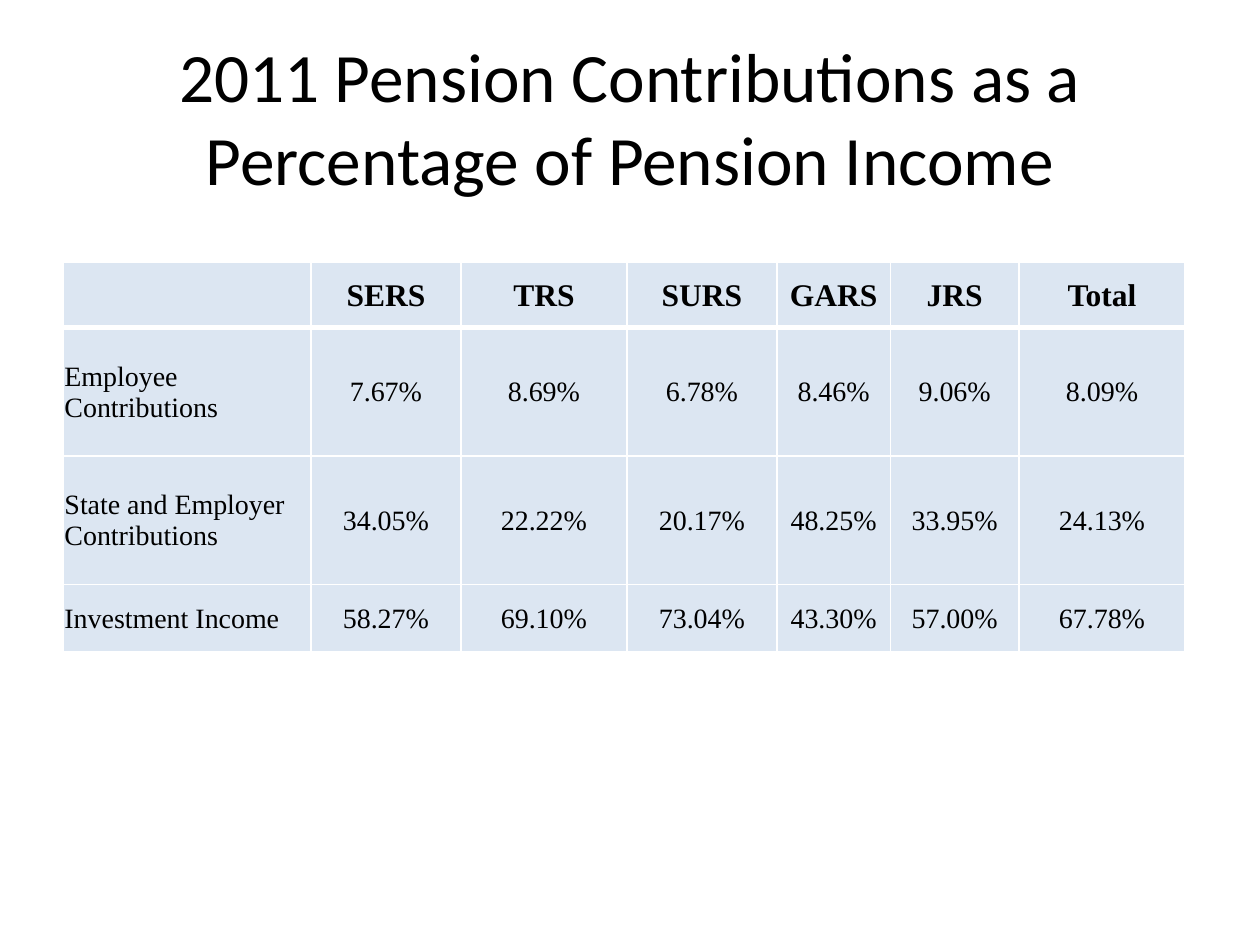
from typing import NamedTuple

from lxml import etree
from pptx import Presentation
from pptx.dml.color import RGBColor
from pptx.enum.text import MSO_ANCHOR, MSO_AUTO_SIZE, PP_ALIGN
from pptx.oxml.ns import qn
from pptx.util import Cm, Pt

BLACK = RGBColor(0x00, 0x00, 0x00)
WHITE = RGBColor(0xFF, 0xFF, 0xFF)
PALE_BLUE = RGBColor(0xDC, 0xE6, 0xF2)
LEFT, CENTER = PP_ALIGN.LEFT, PP_ALIGN.CENTER
MIDDLE = MSO_ANCHOR.MIDDLE
NO_AUTOFIT = MSO_AUTO_SIZE.NONE
TITLE_ONLY_LAYOUT = 5
THIN, THICK = 1, 3  # border widths in points


class TableRow(NamedTuple):
    height: float
    texts: tuple[str, ...]


COLUMN_WIDTHS = (5.0, 3.02, 3.35, 3.02, 2.29, 2.59, 3.35)
ROWS = (
    TableRow(1.32, ("", "SERS", "TRS", "SURS", "GARS", "JRS", "Total")),
    TableRow(2.59, ("Employee Contributions",
                    "7.67%", "8.69%", "6.78%", "8.46%", "9.06%", "8.09%")),
    TableRow(2.59, ("State and Employer Contributions",
                    "34.05%", "22.22%", "20.17%", "48.25%", "33.95%", "24.13%")),
    TableRow(1.35, ("Investment Income",
                    "58.27%", "69.10%", "73.04%", "43.30%", "57.00%", "67.78%")),
)


def add_text(paragraph, text: str, font_name: str, size: float,
             bold: bool = False) -> None:
    run = paragraph.add_run()
    run.text = text
    run.font.name = font_name
    run.font.size = Pt(size)
    run.font.bold = bold
    run.font.color.rgb = BLACK


def set_borders(cell, top: float, bottom: float) -> None:
    """Draw white borders; call before filling, as the schema puts lines first."""
    properties = cell._tc.get_or_add_tcPr()
    widths = {"a:lnL": THIN, "a:lnR": THIN, "a:lnT": top, "a:lnB": bottom}
    for tag, width in widths.items():
        line = etree.SubElement(properties, qn(tag), w=str(Pt(width)))
        fill = etree.SubElement(line, qn("a:solidFill"))
        etree.SubElement(fill, qn("a:srgbClr"), val=str(WHITE))


def fill_cell(cell, text: str, row: int, column: int) -> None:
    is_header = row == 0
    set_borders(cell, top=THICK if row == 1 else THIN,
                bottom=THICK if is_header else THIN)
    cell.fill.solid()
    cell.fill.fore_color.rgb = PALE_BLUE
    if not text:
        return
    cell.vertical_anchor = MIDDLE
    cell.margin_left = cell.margin_right = cell.margin_top = Cm(0.03)
    cell.margin_bottom = 0
    paragraph = cell.text_frame.paragraphs[0]
    paragraph.alignment = LEFT if column == 0 else CENTER
    add_text(paragraph, text, "Times New Roman", 18 if is_header else 16, is_header)


def add_title(slide, text: str) -> None:
    title = slide.shapes.title
    title.left, title.top = Cm(1.27), Cm(0.76)
    title.width, title.height = Cm(22.86), Cm(3.18)
    frame = title.text_frame
    frame.word_wrap = True
    frame.auto_size = NO_AUTOFIT
    frame.vertical_anchor = MIDDLE
    paragraph = frame.paragraphs[0]
    paragraph.alignment = CENTER
    add_text(paragraph, text, "Calibri", 39.6)


def add_contribution_table(slide) -> None:
    table = slide.shapes.add_table(
        len(ROWS), len(COLUMN_WIDTHS), Cm(1.27), Cm(5.28),
        Cm(sum(COLUMN_WIDTHS)), Cm(sum(row.height for row in ROWS))).table
    table.horz_banding = False
    for column, width in zip(table.columns, COLUMN_WIDTHS):
        column.width = Cm(width)
    for row_index, row in enumerate(ROWS):
        table.rows[row_index].height = Cm(row.height)
        for column_index, text in enumerate(row.texts):
            fill_cell(table.cell(row_index, column_index), text,
                      row_index, column_index)


def main() -> None:
    presentation = Presentation()
    presentation.slide_width, presentation.slide_height = Cm(25.4), Cm(19.05)
    slide = presentation.slides.add_slide(
        presentation.slide_layouts[TITLE_ONLY_LAYOUT])
    add_title(slide, "2011 Pension Contributions as a Percentage of Pension Income")
    add_contribution_table(slide)
    presentation.save("out.pptx")


if __name__ == "__main__":
    main()
